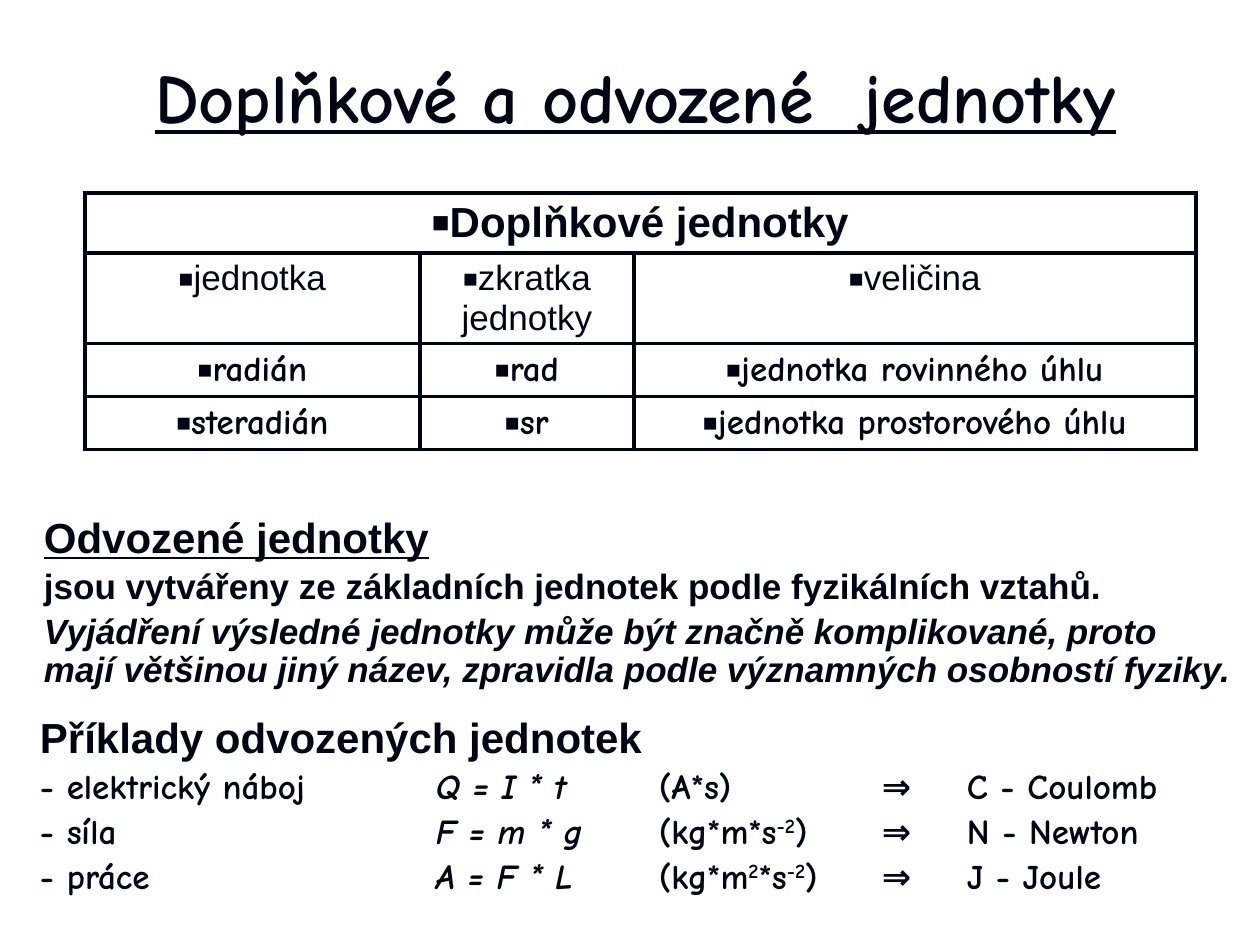
import pptx
import pptx.dml.color
import pptx.enum.text
import pptx.oxml
import pptx.oxml.ns
import pptx.util

PX = 914400 // 126
COLORS = {"ink": "000514", "paper": "FFFFFF"}
SANS, COMIC = "Arial", "Comic Neue"
CENTER = pptx.enum.text.PP_ALIGN.CENTER
NS = pptx.oxml.ns.nsdecls("a")


def px(n):
    return pptx.util.Emu(n * PX)


def color(name):
    return pptx.dml.color.RGBColor.from_string(COLORS[name])


def add_xml(parent, xml):
    parent.append(pptx.oxml.parse_xml(xml))


def style(p, size, font=SANS, bold=True, underline=False, italic=False):
    p.space_before = pptx.util.Pt(size * 0.2)
    for r in p.runs:
        f = r.font
        f.size, f.name, f.bold = pptx.util.Pt(size), font, bold
        f.underline, f.italic = underline, italic
        f.color.rgb = color("ink")


def add_bullet(p):
    pPr = p._p.get_or_add_pPr()
    pPr.set("marL", "0")
    pPr.set("indent", "0")
    add_xml(pPr, f'<a:buClr {NS}><a:srgbClr val="{COLORS["ink"]}"/></a:buClr>')
    add_xml(pPr, f'<a:buSzPct {NS} val="70000"/>')
    add_xml(pPr, f'<a:buFont {NS} typeface="{SANS}"/>')
    add_xml(pPr, f'<a:buChar {NS} char="■"/>')


def add_borders(cell):
    tcPr = cell._tc.get_or_add_tcPr()
    for side in "LRTB":
        add_xml(tcPr, f'<a:ln{side} {NS} w="28575"><a:solidFill>'
                      f'<a:srgbClr val="{COLORS["ink"]}"/></a:solidFill></a:ln{side}>')


def add_tabs(p, stops):
    tabs = "".join(f'<a:tab pos="{px(n)}" algn="l"/>' for n in stops)
    add_xml(p._p.get_or_add_pPr(), f"<a:tabLst {NS}>{tabs}</a:tabLst>")


def place_title(s, x, y, w, h):
    sp = s.shapes.title
    sp.left, sp.top, sp.width, sp.height = px(x), px(y), px(w), px(h)
    tf = sp.text_frame
    tf.text = "Doplňkové a odvozené  jednotky"
    tf.word_wrap = True
    tf.auto_size = pptx.enum.text.MSO_AUTO_SIZE.NONE
    tf.vertical_anchor = pptx.enum.text.MSO_ANCHOR.MIDDLE
    p = tf.paragraphs[0]
    style(p, 40, COMIC, underline=True)
    p.space_before = 0
    p.alignment = CENTER


def place_units_table(s, x, y, widths, heights):
    rows = [
        ["Doplňkové jednotky"],
        ["jednotka", "zkratka jednotky", "veličina"],
        ["radián", "rad", "jednotka rovinného úhlu"],
        ["steradián", "sr", "jednotka prostorového úhlu"],
    ]
    styles = [(24, SANS, True), (20, SANS, False), (20, COMIC, True), (20, COMIC, True)]
    table = s.shapes.add_table(len(rows), len(widths), px(x), px(y),
                               px(sum(widths)), px(sum(heights))).table
    table.first_row = table.horz_banding = False
    for column, w in zip(table.columns, widths):
        column.width = px(w)
    for row, h in zip(table.rows, heights):
        row.height = px(h)
    for cell in table.iter_cells():
        add_borders(cell)
        cell.fill.background()
    table.cell(0, 0).merge(table.cell(0, len(widths) - 1))
    for i, (texts, look) in enumerate(zip(rows, styles)):
        for j, text in enumerate(texts):
            p = table.cell(i, j).text_frame.paragraphs[0]
            p.text = text
            style(p, *look)
            p.alignment = CENTER
            add_bullet(p)


def add_text_box(s, x, y, w, h):
    tf = s.shapes.add_textbox(px(x), px(y), px(w), px(h)).text_frame
    tf.word_wrap = True
    tf.margin_left = tf.margin_right = tf.margin_top = tf.margin_bottom = px(5)
    return tf


def place_definition(s, x, y, w, h):
    tf = add_text_box(s, x, y, w, h)
    tf.text = "\n".join([
        "Odvozené jednotky",
        "jsou vytvářeny ze základních jednotek podle fyzikálních vztahů.",
        "Vyjádření výsledné jednotky může být značně komplikované, proto mají "
        "většinou jiný název, zpravidla podle významných osobností fyziky.",
    ])
    heading, body, note = tf.paragraphs
    style(heading, 24, underline=True)
    style(body, 20)
    style(note, 20, italic=True)
    for p in tf.paragraphs:
        p.line_spacing = 0.9


def place_examples(s, x, y, w, h):
    examples = [
        ("elektrický náboj", "Q = I * t", ["(A*s)"], "C - Coulomb"),
        ("síla", "F = m * g", ["(kg*m*s", "-2", ")"], "N - Newton"),
        ("práce", "A = F * L", ["(kg*m", "2", "*s", "-2", ")"], "J - Joule"),
    ]
    tf = add_text_box(s, x, y, w, h)
    tf.text = "Příklady odvozených jednotek"
    style(tf.paragraphs[0], 24)
    for quantity, formula, unit, name in examples:
        p = tf.add_paragraph()
        for text in [f"- {quantity}\t", formula, "\t", *unit, f"\t⇒\t{name}"]:
            p.add_run().text = text
        style(p, 20, COMIC)
        p.runs[1].font.italic = True
        for r in p.runs[4:3 + len(unit):2]:
            r._r.get_or_add_rPr().set("baseline", "30000")
        add_tabs(p, [396, 619, 842, 927])
    for p in tf.paragraphs:
        p.line_spacing = 0.9


def main():
    prs = pptx.Presentation()
    prs.slide_width, prs.slide_height = px(1260), px(945)
    s = prs.slides.add_slide(prs.slide_layouts[5])
    s.background.fill.solid()
    s.background.fill.fore_color.rgb = color("paper")
    place_title(s, 35, 35, 1201, 120)
    place_units_table(s, 85, 193, [335, 214, 562], [60, 90, 53, 53])
    place_definition(s, 39, 512, 1201, 188)
    place_examples(s, 35, 712, 1201, 195)
    prs.save("out.pptx")


if __name__ == "__main__":
    main()
